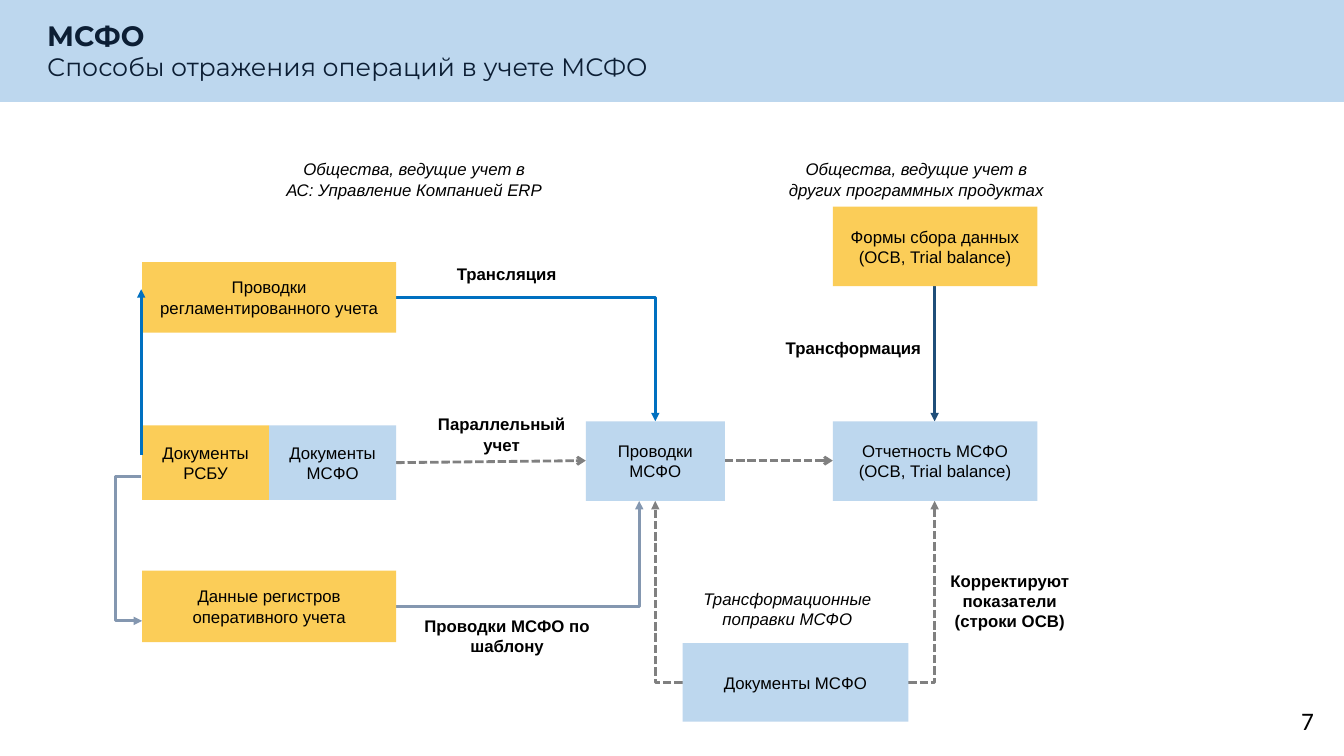
import pptx
import pptx.dml.color
import pptx.enum.dml
import pptx.enum.shapes
import pptx.enum.text
import pptx.oxml
import pptx.oxml.ns
import pptx.util

RGBColor = pptx.dml.color.RGBColor
ALIGN = pptx.enum.text.PP_ALIGN
ANCHOR = pptx.enum.text.MSO_ANCHOR
CONNECTOR = pptx.enum.shapes.MSO_CONNECTOR

PALE_BLUE = RGBColor(0xBD, 0xD7, 0xEE)
YELLOW = RGBColor(0xFB, 0xCD, 0x58)
NAVY = RGBColor(0x0C, 0x1E, 0x34)
BLACK = RGBColor(0x00, 0x00, 0x00)
BLUE = RGBColor(0x00, 0x70, 0xC0)
DARK_BLUE = RGBColor(0x1F, 0x4E, 0x79)
STEEL = RGBColor(0x84, 0x97, 0xB0)
GREY = RGBColor(0x80, 0x80, 0x80)

EMU_PER_PX = 9144  # 100 px to the inch
SLIDE_WIDTH, SLIDE_HEIGHT = 1333, 750


def px(length):
    return pptx.util.Emu(length * EMU_PER_PX)


class Diagram:
    """Holds the style and the current slide."""

    font_name = "Arial"
    font_size = 12
    line_width = 2

    def __init__(self, slide):
        self.slide = slide

    def add_run(self, paragraph, text, size=font_size, name=font_name,
                color=BLACK, bold=False, italic=False):
        run = paragraph.add_run()
        run.text = text
        run.font.size = pptx.util.Pt(size)
        run.font.name = name
        run.font.color.rgb = color
        run.font.bold = bold
        run.font.italic = italic

    def fill_text(self, shape, lines, align=ALIGN.CENTER, **style):
        frame = shape.text_frame
        frame.word_wrap = True
        for number, line in enumerate(lines):
            paragraph = frame.add_paragraph() if number else frame.paragraphs[0]
            paragraph.alignment = align
            self.add_run(paragraph, line, **style)

    def box(self, place, fill, *lines):
        shape = self.slide.shapes.add_shape(
            pptx.enum.shapes.MSO_SHAPE.RECTANGLE, *map(px, place))
        shape.shadow.inherit = False
        shape.fill.solid()
        shape.fill.fore_color.rgb = fill
        shape.line.fill.background()
        shape.text_frame.vertical_anchor = ANCHOR.MIDDLE
        self.fill_text(shape, lines)

    def label(self, place, *lines, **style):
        shape = self.slide.shapes.add_textbox(*map(px, place))
        self.fill_text(shape, lines, **style)

    def title(self, place, heading, subtitle):
        shape = self.slide.shapes.add_textbox(*map(px, place))
        shape.text_frame.word_wrap = True
        paragraph = shape.text_frame.paragraphs[0]
        self.add_run(paragraph, heading, 20, "Montserrat", NAVY, bold=True)
        paragraph.add_line_break()
        self.add_run(paragraph, subtitle, 18, "Montserrat", NAVY)

    def arrow(self, start, end, color, dashed=False, head="triangle",
              kind=CONNECTOR.STRAIGHT):
        connector = self.slide.shapes.add_connector(
            kind, *map(px, start), *map(px, end))
        connector.line.color.rgb = color
        connector.line.width = pptx.util.Pt(self.line_width)
        if dashed:
            connector.line.dash_style = pptx.enum.dml.MSO_LINE.SQUARE_DOT
        properties = connector.element.spPr
        outline = properties.find(pptx.oxml.ns.qn("a:ln"))
        namespace = pptx.oxml.ns.nsdecls("a")
        outline.append(pptx.oxml.parse_xml(
            f'<a:tailEnd {namespace} type="{head}"/>'))
        properties.append(pptx.oxml.parse_xml(f"<a:effectLst {namespace}/>"))
        return properties.find(pptx.oxml.ns.qn("a:prstGeom"))

    def corner_arrow(self, start, end, color, dashed=False):
        """Runs sideways first, then up or down."""
        geometry = self.arrow(start, end, color, dashed, kind=CONNECTOR.ELBOW)
        geometry.set("prst", "bentConnector2")

    def loop_arrow(self, start, end, turn_x, color):
        """Runs sideways to turn_x, then down and back."""
        geometry = self.arrow(start, end, color, kind=CONNECTOR.ELBOW)
        ratio = 100000 * (turn_x - start[0]) // (end[0] - start[0])
        guides = geometry.find(pptx.oxml.ns.qn("a:avLst"))
        guides.append(pptx.oxml.parse_xml(
            f'<a:gd {pptx.oxml.ns.nsdecls("a")} name="adj1" fmla="val {ratio}"/>'))


def main():
    presentation = pptx.Presentation()
    presentation.slide_width = px(SLIDE_WIDTH)
    presentation.slide_height = px(SLIDE_HEIGHT)
    diagram = Diagram(presentation.slides.add_slide(presentation.slide_layouts[6]))

    # Header and page number
    diagram.box((0, 0, SLIDE_WIDTH, 101), PALE_BLUE)
    diagram.title((37, 13, 761, 74), "МСФО", "Способы отражения операций в учете МСФО")
    diagram.label((1013, 695, 300, 40), "7", align=ALIGN.RIGHT, size=18, name="Calibri")

    # Arrows into the postings and the report
    diagram.corner_arrow((393, 295), (650, 418), BLUE)
    diagram.corner_arrow((393, 602), (634, 497), STEEL)
    diagram.corner_arrow((677, 677), (650, 497), GREY, dashed=True)
    diagram.corner_arrow((901, 677), (927, 497), GREY, dashed=True)
    diagram.arrow((393, 459), (581, 457), GREY, dashed=True, head="arrow")
    diagram.arrow((719, 457), (826, 457), GREY, dashed=True, head="arrow")
    diagram.arrow((927, 284), (927, 418), DARK_BLUE)

    # Source documents and records
    diagram.box((141, 260, 252, 70), YELLOW, "Проводки регламентированного учета")
    diagram.box((141, 422, 126, 74), YELLOW, "Документы РСБУ")
    diagram.box((267, 422, 126, 74), PALE_BLUE, "Документы МСФО")
    diagram.box((141, 566, 252, 71), YELLOW, "Данные регистров оперативного учета")
    diagram.box((826, 205, 203, 79), YELLOW, "Формы сбора данных", "(ОСВ, Trial balance)")

    # Postings, report and corrections
    diagram.box((581, 418, 138, 79), PALE_BLUE, "Проводки МСФО")
    diagram.box((826, 418, 203, 79), PALE_BLUE, "Отчетность МСФО", "(ОСВ, Trial balance)")
    diagram.box((677, 638, 224, 78), PALE_BLUE, "Документы МСФО")

    # Arrows along the left edge
    diagram.arrow((140, 451), (140, 287), BLUE)
    diagram.loop_arrow((140, 473), (141, 616), 114, STEEL)

    # Names of the methods
    diagram.label((422, 257, 161, 30), "Трансляция", bold=True)
    diagram.label((417, 406, 161, 51), "Параллельный учет", bold=True)
    diagram.label((401, 606, 204, 50), "Проводки МСФО по шаблону", bold=True)
    diagram.label((766, 330, 161, 30), "Трансформация", bold=True)
    diagram.label((921, 561, 161, 71), "Корректируют показатели (строки ОСВ)", bold=True)

    # Captions
    diagram.label((263, 153, 296, 51), "Общества, ведущие учет в",
                  "АС: Управление Компанией ERP", italic=True)
    diagram.label((771, 153, 276, 51),
                  "Общества, ведущие учет в других программных продуктах", italic=True)
    diagram.label((683, 579, 196, 50), "Трансформационные поправки МСФО", italic=True)

    presentation.save("out.pptx")


if __name__ == "__main__":
    main()
